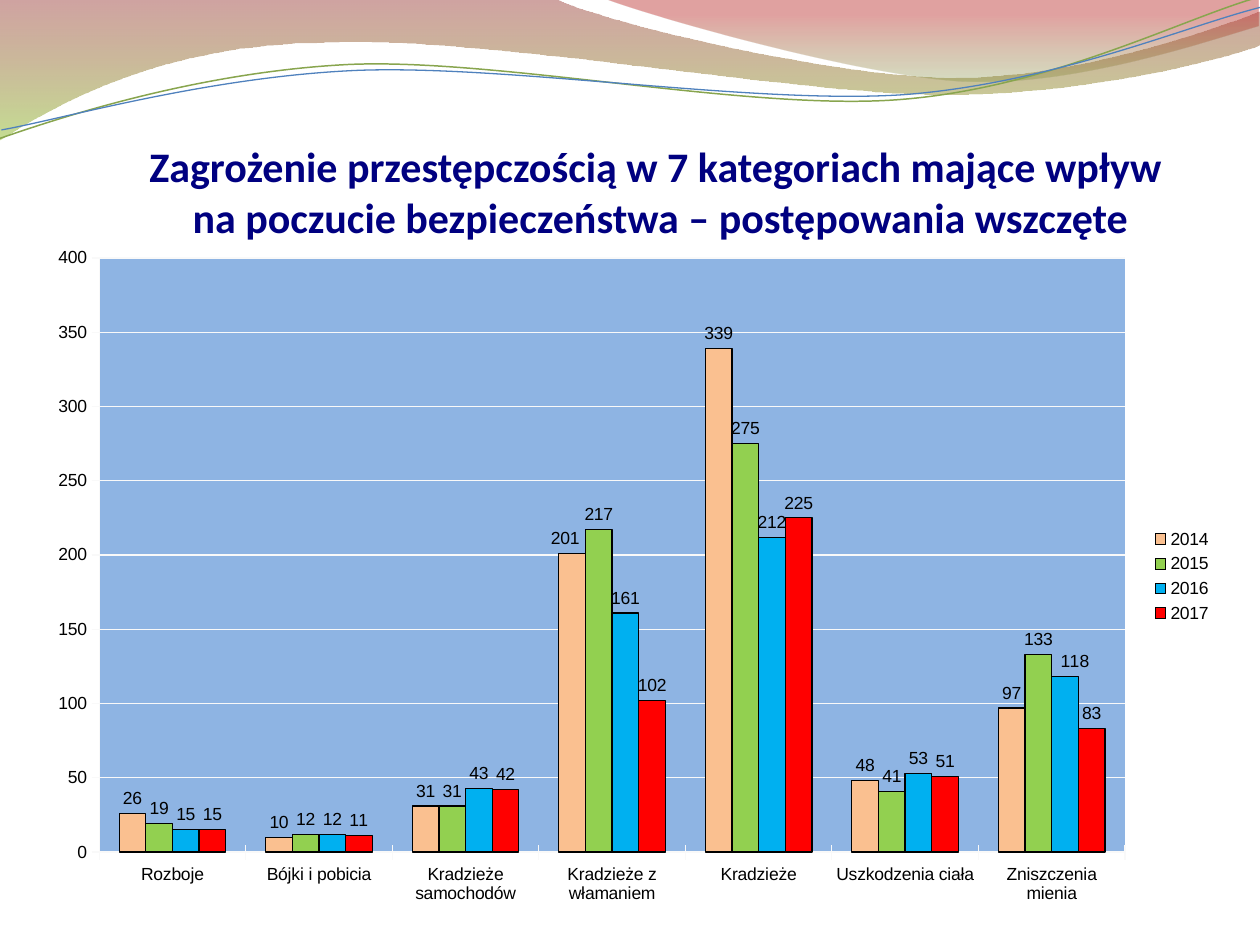
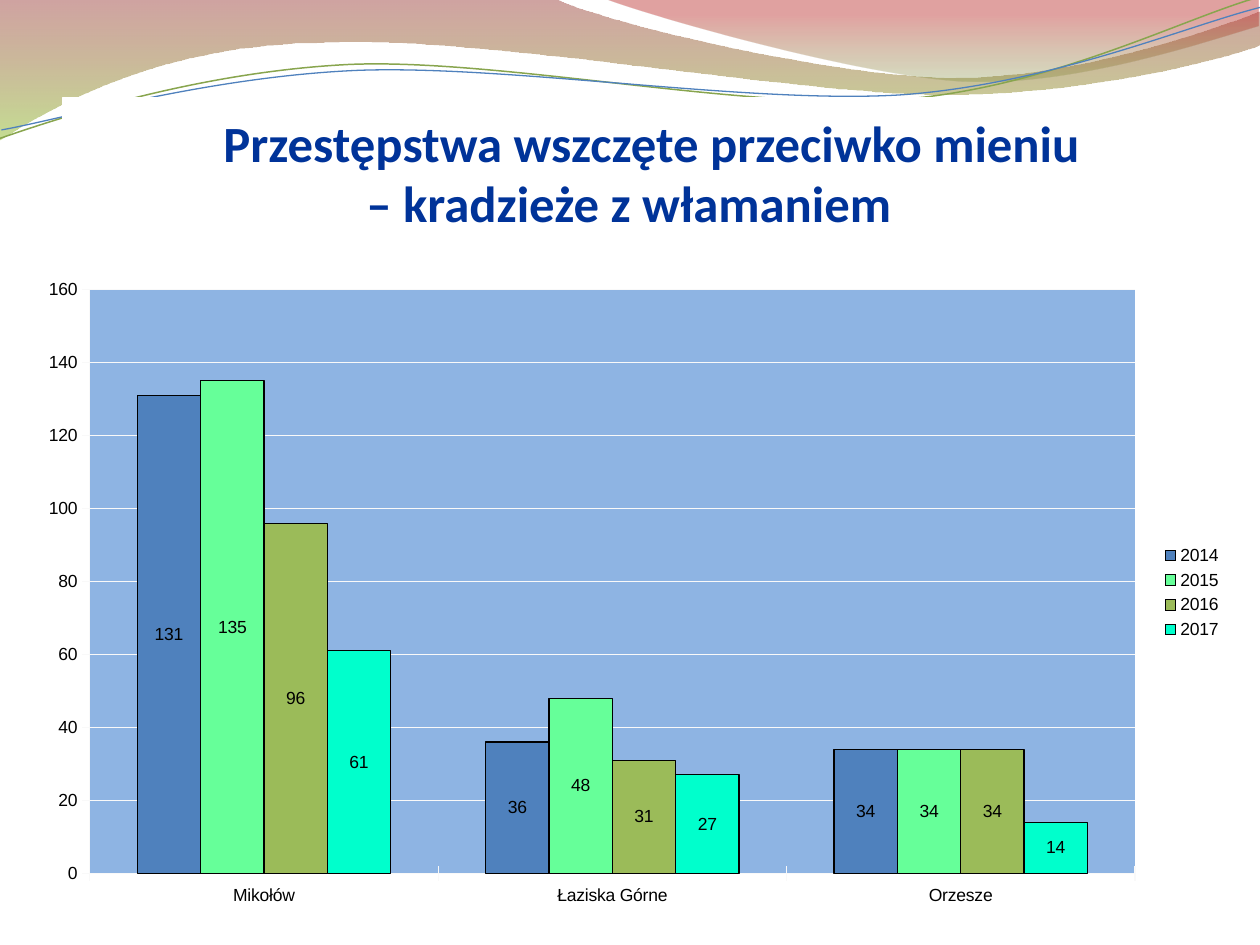
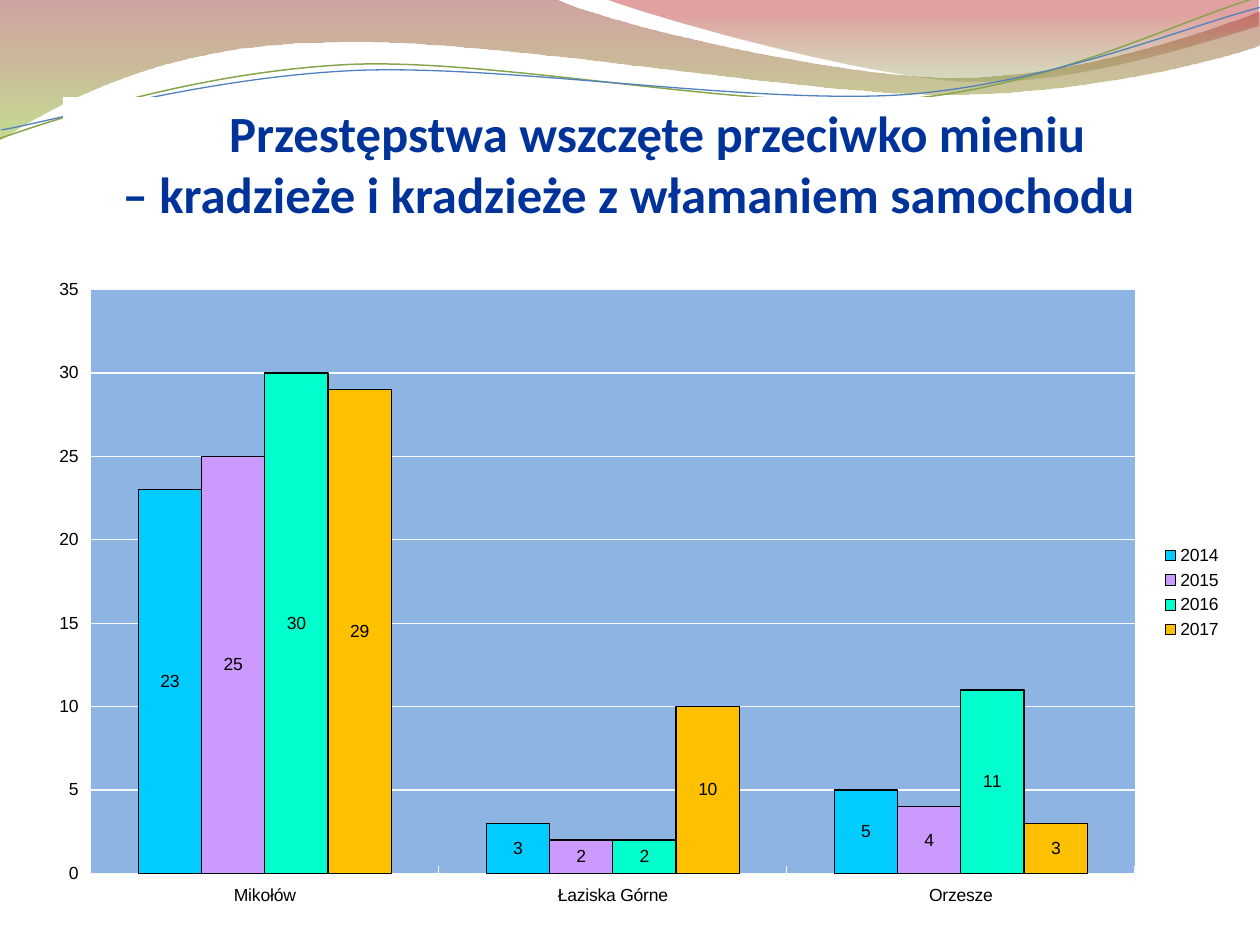
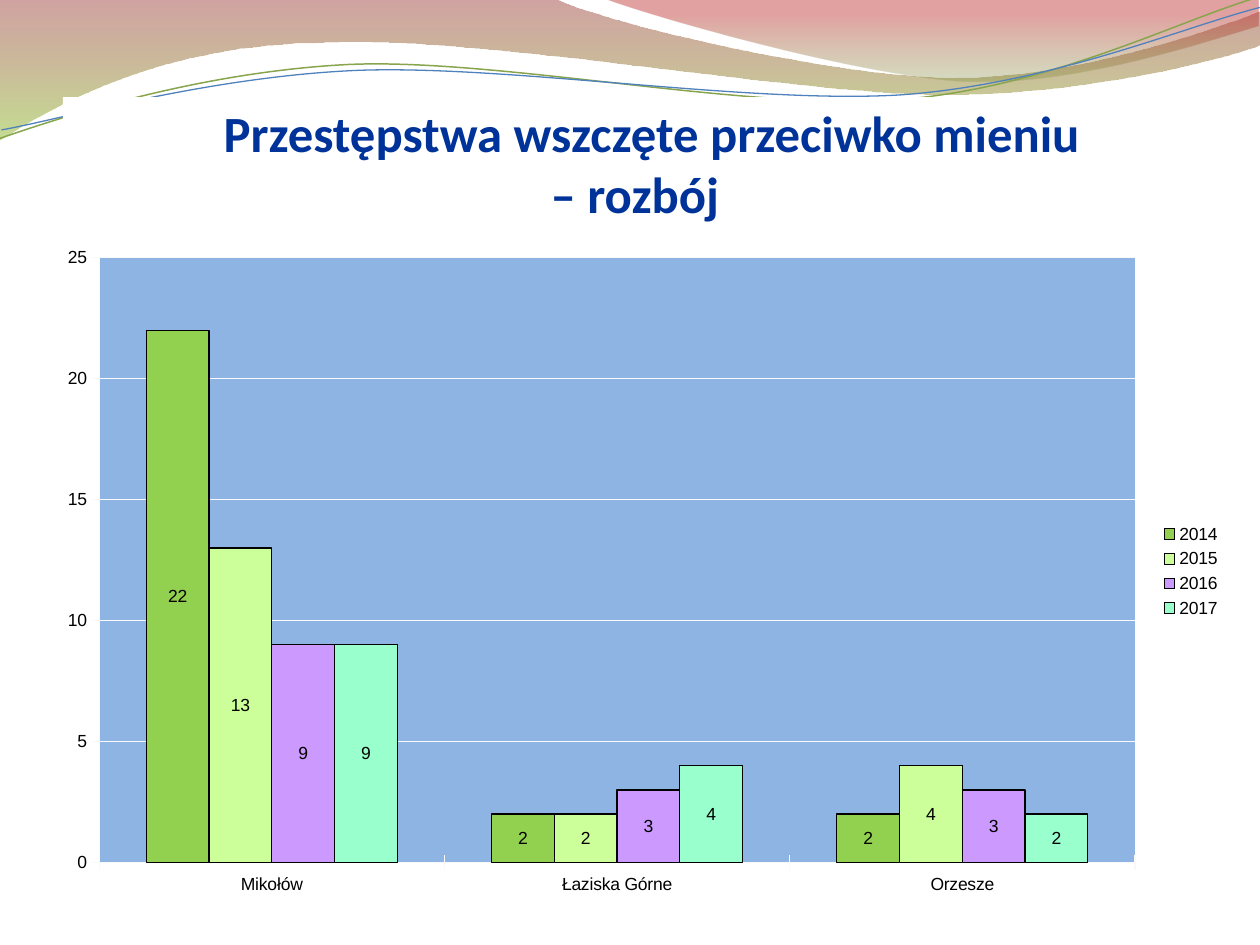
import math
from dataclasses import dataclass

import lxml.etree
import pptx
import pptx.chart.chart
import pptx.chart.data
import pptx.dml.color
import pptx.enum.chart
import pptx.enum.text
import pptx.oxml
import pptx.oxml.ns
import pptx.shapes.autoshape
import pptx.slide
import pptx.util
from pptx.util import Cm

Point = tuple[float, float]

COLORS = {
    "white": "FFFFFF", "black": "000000", "grid": "F9F9F9", "plot": "8EB4E3",
    "navy": "000080", "royal": "003399",
    "wave brick": "973330", "wave lime": "95C238",
    "wave olive": "769537", "wave red": "BE3330",
    "line green": "88A54E", "steel": "4F81BD",
    "peach": "FAC090", "green": "92D050", "azure": "00B0F0", "red": "FF0000",
    "mint": "66FF99", "olive": "9BBB59", "turquoise": "00FFCC",
    "sky": "00CCFF", "lilac": "CC99FF", "amber": "FFC000",
    "pale lime": "CCFF99", "pale mint": "99FFCC",
}
YEARS = ("2014", "2015", "2016", "2017")
TOWNS = ("Mikołów", "Łaziska Górne", "Orzesze")
OFFENCES = ("Rozboje", "Bójki i pobicia", "Kradzieże samochodów", "Kradzieże z włamaniem",
            "Kradzieże", "Uszkodzenia ciała", "Zniszczenia mienia")
LINE_TILT = -2.7
CENTER = pptx.enum.chart.XL_LABEL_POSITION.CENTER
OUTSIDE = pptx.enum.chart.XL_LABEL_POSITION.OUTSIDE_END


@dataclass(frozen=True)
class Frame:
    """A rectangle on the slide, in centimetres."""
    left: float
    top: float
    width: float
    height: float

    def lengths(self) -> tuple[Cm, Cm, Cm, Cm]:
        return Cm(self.left), Cm(self.top), Cm(self.width), Cm(self.height)


@dataclass(frozen=True)
class Stop:
    position: float
    color: str
    opacity: int


@dataclass(frozen=True)
class Wave:
    """A segment of one point is straight; one of three points is a cubic curve.

    A wave with a pivot is a shape tilted about that point.
    """
    start: Point
    segments: tuple[tuple[Point, ...], ...]
    stops: tuple[Stop, ...] = ()
    angle: int = 0
    line: str = ""
    line_width: float = 0
    pivot: Point | None = None


@dataclass(frozen=True)
class TitleLine:
    text: str
    indent: float = 0


@dataclass(frozen=True)
class Title:
    frame: Frame
    lines: tuple[TitleLine, ...]
    size: int = 29
    color: str = "royal"
    outlined: bool = False


@dataclass(frozen=True)
class LabelShift:
    """A sideways move of one data label, in centimetres."""
    series: int
    point: int
    distance: float


@dataclass(frozen=True)
class ColumnChart:
    frame: Frame
    plot: Frame
    categories: tuple[str, ...]
    values: tuple[tuple[int, ...], ...]
    colors: tuple[str, ...]
    maximum: int
    step: int
    label_position: pptx.enum.chart.XL_LABEL_POSITION = CENTER
    label_shifts: tuple[LabelShift, ...] = ()


@dataclass(frozen=True)
class ChartPage:
    title: Title
    chart: ColumnChart


WAVES = (
    Wave((0, -0.03), (
        ((11.18, -0.03),),
        ((12.07, 0.43), (16.84, 1.57), (19.25, 1.57)),
        ((21.64, 1.57), (24.33, 0.64), (25.37, 0.23)),
        ((25.4, 0.91),),
        ((24.97, 1.09), (22.07, 1.91), (18.92, 1.91)),
        ((15.77, 1.88), (9.68, 0.71), (6.53, 0.86)),
        ((3.28, 0.89), (1.17, 2.08), (-0.03, 2.84)),
    ), stops=(Stop(0, "wave brick", 45), Stop(1, "wave lime", 55)), angle=270),
    Wave((12.17, -0.03), (
        ((12.93, 0.28), (17.32, 1.55), (19.51, 1.65)),
        ((21.72, 1.73), (24.41, 0.81), (25.37, 0.53)),
        ((25.37, 0),),
    ), stops=(Stop(0, "wave olive", 30), Stop(0.8, "wave red", 45)), angle=90),
    Wave((0, 2.79), (
        ((1.24, 2.36), (4.01, 1.45), (7.04, 1.3)),
        ((10.06, 1.17), (15.06, 2.24), (18.11, 2.01)),
        ((21.16, 1.78), (23.83, 0.38), (25.35, -0.05)),
    ), line="line green", line_width=0.85, pivot=(12.69, 1.45)),
    Wave((0.03, 2.62), (
        ((1.22, 2.41), (4.17, 1.55), (7.19, 1.42)),
        ((10.24, 1.3), (15.16, 2.11), (18.21, 1.91)),
        ((21.23, 1.68), (23.9, 0.53), (25.4, 0.15)),
    ), line="steel", line_width=0.75, pivot=(12.71, 1.49)),
)

PAGES = (
    ChartPage(
        Title(Frame(1.9, 2.51, 22.83, 2.36), (
            TitleLine("Zagrożenie przestępczością w 7 kategoriach mające wpływ "),
            TitleLine("na poczucie bezpieczeństwa – postępowania wszczęte"),
        ), size=24, color="navy"),
        ColumnChart(
            Frame(0.71, 4.72, 23.98, 13.79), Frame(2, 5.2, 20.68, 11.98), OFFENCES,
            ((26, 10, 31, 201, 339, 48, 97), (19, 12, 31, 217, 275, 41, 133),
             (15, 12, 43, 161, 212, 53, 118), (15, 11, 42, 102, 225, 51, 83)),
            ("peach", "green", "azure", "red"), 400, 50, OUTSIDE,
            (LabelShift(0, 3, -0.14), LabelShift(2, 6, 0.2))),
    ),
    ChartPage(
        Title(Frame(1.27, 1.96, 22.83, 2.74), (
            TitleLine("Przestępstwa wszczęte przeciwko mieniu ", 1.15),
            TitleLine("– kradzieże z włamaniem"),
        ), outlined=True),
        ColumnChart(
            Frame(0.51, 5.38, 24.38, 13.13), Frame(1.81, 5.84, 21.07, 11.77), TOWNS,
            ((131, 36, 34), (135, 48, 34), (96, 31, 34), (61, 27, 14)),
            ("steel", "mint", "olive", "turquoise"), 160, 20),
    ),
    ChartPage(
        Title(Frame(1.27, 1.96, 22.83, 2.54), (
            TitleLine("Przestępstwa wszczęte przeciwko mieniu ", 1.38),
            TitleLine("– kradzieże i kradzieże z włamaniem samochodu"),
        )),
        ColumnChart(
            Frame(0.71, 5.38, 24.18, 13.13), Frame(1.83, 5.84, 21.05, 11.77), TOWNS,
            ((23, 3, 5), (25, 2, 4), (30, 2, 11), (29, 10, 3)),
            ("sky", "lilac", "turquoise", "amber"), 35, 5),
    ),
    ChartPage(
        Title(Frame(1.27, 1.96, 22.83, 2.54), (
            TitleLine("Przestępstwa wszczęte przeciwko mieniu", 0.92),
            TitleLine("– rozbój", 0.23),
        )),
        ColumnChart(
            Frame(0.89, 4.72, 23.98, 13.59), Frame(2, 5.2, 20.88, 12.19), TOWNS,
            ((22, 2, 2), (13, 2, 4), (9, 3, 3), (9, 4, 2)),
            ("green", "pale lime", "lilac", "pale mint"), 25, 5),
    ),
)


def rgb(name: str) -> pptx.dml.color.RGBColor:
    return pptx.dml.color.RGBColor.from_string(COLORS[name])


def set_line(line, color: str, width: float = 0.75) -> None:
    line.color.rgb = rgb(color)
    line.width = pptx.util.Pt(width)


def untilt(point: Point, pivot: Point) -> Point:
    """Turn a point back by the tilt, to where it lies before the shape is rotated."""
    angle = math.radians(-LINE_TILT)
    x, y = point[0] - pivot[0], point[1] - pivot[1]
    return (pivot[0] + x * math.cos(angle) - y * math.sin(angle),
            pivot[1] + x * math.sin(angle) + y * math.cos(angle))


def bend_segments(shape: pptx.shapes.autoshape.Shape, wave: Wave) -> None:
    """Join the straight steps through each curve's three points into one cubic curve."""
    steps = iter(shape.element.xpath(".//a:lnTo"))
    for segment in wave.segments:
        group = [next(steps) for _ in segment]
        if len(group) == 3:
            curve = lxml.etree.Element(pptx.oxml.ns.qn("a:cubicBezTo"))
            group[0].addprevious(curve)
            for step in group:
                curve.append(step[0])
                step.getparent().remove(step)


def fill_gradient(shape: pptx.shapes.autoshape.Shape, wave: Wave) -> None:
    shape.fill.gradient()
    shape.fill.gradient_angle = wave.angle
    for target, stop in zip(shape.fill.gradient_stops, wave.stops):
        target.position = stop.position
        target.color.rgb = rgb(stop.color)
    for node, stop in zip(shape.element.xpath(".//a:gs/a:srgbClr"), wave.stops):
        alpha = lxml.etree.SubElement(node, pptx.oxml.ns.qn("a:alpha"))
        alpha.set("val", str(stop.opacity * 1000))


def draw_wave(page: pptx.slide.Slide, wave: Wave) -> pptx.shapes.autoshape.Shape:
    points = [wave.start, *(point for segment in wave.segments for point in segment)]
    if wave.pivot:
        points = [untilt(point, wave.pivot) for point in points]
    corners = [(Cm(x), Cm(y)) for x, y in points]
    builder = page.shapes.build_freeform(*corners[0])
    builder.add_line_segments(corners[1:], close=bool(wave.stops))
    shape = builder.convert_to_shape()
    bend_segments(shape, wave)
    shape.shadow.inherit = False
    if wave.pivot:
        shape.rotation = LINE_TILT
    if wave.stops:
        fill_gradient(shape, wave)
        shape.line.fill.background()
    else:
        shape.fill.background()
        set_line(shape.line, wave.line, wave.line_width)
    return shape


def move_waves_to_layout(page: pptx.slide.Slide) -> None:
    """Draw the waves on a page, then hand them to its layout so all pages share them."""
    for wave in WAVES:
        page.slide_layout.shapes.element.append(draw_wave(page, wave).element)


def draw_title(page: pptx.slide.Slide, title: Title) -> None:
    box = page.shapes.add_textbox(*title.frame.lengths())
    box.fill.solid()
    box.fill.fore_color.rgb = rgb("white")
    if title.outlined:
        set_line(box.line, "white")
    text = box.text_frame
    text.word_wrap = True
    text.vertical_anchor = pptx.enum.text.MSO_ANCHOR.BOTTOM
    text.margin_left = text.margin_right = text.margin_bottom = 0
    text.margin_top = Cm(0.13)
    for index, line in enumerate(title.lines):
        paragraph = text.add_paragraph() if index else text.paragraphs[0]
        paragraph.text = line.text
        paragraph.alignment = pptx.enum.text.PP_ALIGN.CENTER
        if line.indent:
            paragraph._p.get_or_add_pPr().set("marL", str(Cm(line.indent)))
        paragraph.font.name = "Calibri"
        paragraph.font.size = pptx.util.Pt(title.size)
        paragraph.font.bold = True
        paragraph.font.color.rgb = rgb(title.color)


def chart_layout(settings: dict[str, str | float]) -> lxml.etree.ElementBase:
    parts = "".join(f'<c:{key} val="{value}"/>' for key, value in settings.items())
    return pptx.oxml.parse_xml(f'<c:layout {pptx.oxml.ns.nsdecls("c")}>'
                               f'<c:manualLayout>{parts}</c:manualLayout></c:layout>')


def place_plot(chart: pptx.chart.chart.Chart, frame: Frame, plot: Frame) -> None:
    """Fix the inner plot area within the chart frame and fill it."""
    area = chart.element.chart.plotArea
    for layout in area.xpath("c:layout"):
        area.remove(layout)
    area.insert(0, chart_layout({
        "layoutTarget": "inner", "xMode": "edge", "yMode": "edge",
        "x": (plot.left - frame.left) / frame.width,
        "y": (plot.top - frame.top) / frame.height,
        "w": plot.width / frame.width,
        "h": plot.height / frame.height,
    }))
    area.append(pptx.oxml.parse_xml(
        f'<c:spPr {pptx.oxml.ns.nsdecls("c", "a")}><a:solidFill>'
        f'<a:srgbClr val="{COLORS["plot"]}"/></a:solidFill></c:spPr>'))


def shift_label(chart: pptx.chart.chart.Chart, content: ColumnChart, shift: LabelShift) -> None:
    point = chart.plots[0].series[shift.series].points[shift.point]
    point.data_label.position = content.label_position
    label = chart.element.xpath(
        f".//c:ser[c:idx/@val={shift.series}]//c:dLbl[c:idx/@val={shift.point}]")[0]
    label.insert(1, chart_layout({"x": shift.distance / content.frame.width, "y": 0}))


def draw_chart(page: pptx.slide.Slide, content: ColumnChart) -> None:
    data = pptx.chart.data.CategoryChartData()
    data.categories = content.categories
    for year, values in zip(YEARS, content.values):
        data.add_series(year, values)
    chart = page.shapes.add_chart(pptx.enum.chart.XL_CHART_TYPE.COLUMN_CLUSTERED,
                                  *content.frame.lengths(), data).chart
    chart.has_title = False
    chart.font.name = "Arial"
    chart.font.size = pptx.util.Pt(10)
    chart.font.color.rgb = rgb("black")
    chart.has_legend = True
    chart.legend.position = pptx.enum.chart.XL_LEGEND_POSITION.RIGHT
    chart.legend.include_in_layout = False

    for axis in (chart.category_axis, chart.value_axis):
        axis.major_tick_mark = pptx.enum.chart.XL_TICK_MARK.CROSS
        set_line(axis.format.line, "grid")
    chart.value_axis.minimum_scale = 0
    chart.value_axis.maximum_scale = content.maximum
    chart.value_axis.major_unit = content.step
    chart.value_axis.has_major_gridlines = True
    set_line(chart.value_axis.major_gridlines.format.line, "grid")

    columns = chart.plots[0]
    columns.vary_by_categories = False
    columns.gap_width = 150
    columns.overlap = 0
    for series, color in zip(columns.series, content.colors):
        series.format.fill.solid()
        series.format.fill.fore_color.rgb = rgb(color)
        set_line(series.format.line, "black")
        series.data_labels.show_value = True
        series.data_labels.position = content.label_position
    for shift in content.label_shifts:
        shift_label(chart, content, shift)
    place_plot(chart, content.frame, content.plot)


def main() -> None:
    deck = pptx.Presentation()
    deck.slide_width, deck.slide_height = Cm(25.4), Cm(19.05)
    blank = deck.slide_layouts[6]
    for number, content in enumerate(PAGES):
        page = deck.slides.add_slide(blank)
        if number == 0:
            move_waves_to_layout(page)
        draw_title(page, content.title)
        draw_chart(page, content.chart)
    deck.save("out.pptx")


if __name__ == "__main__":
    main()
